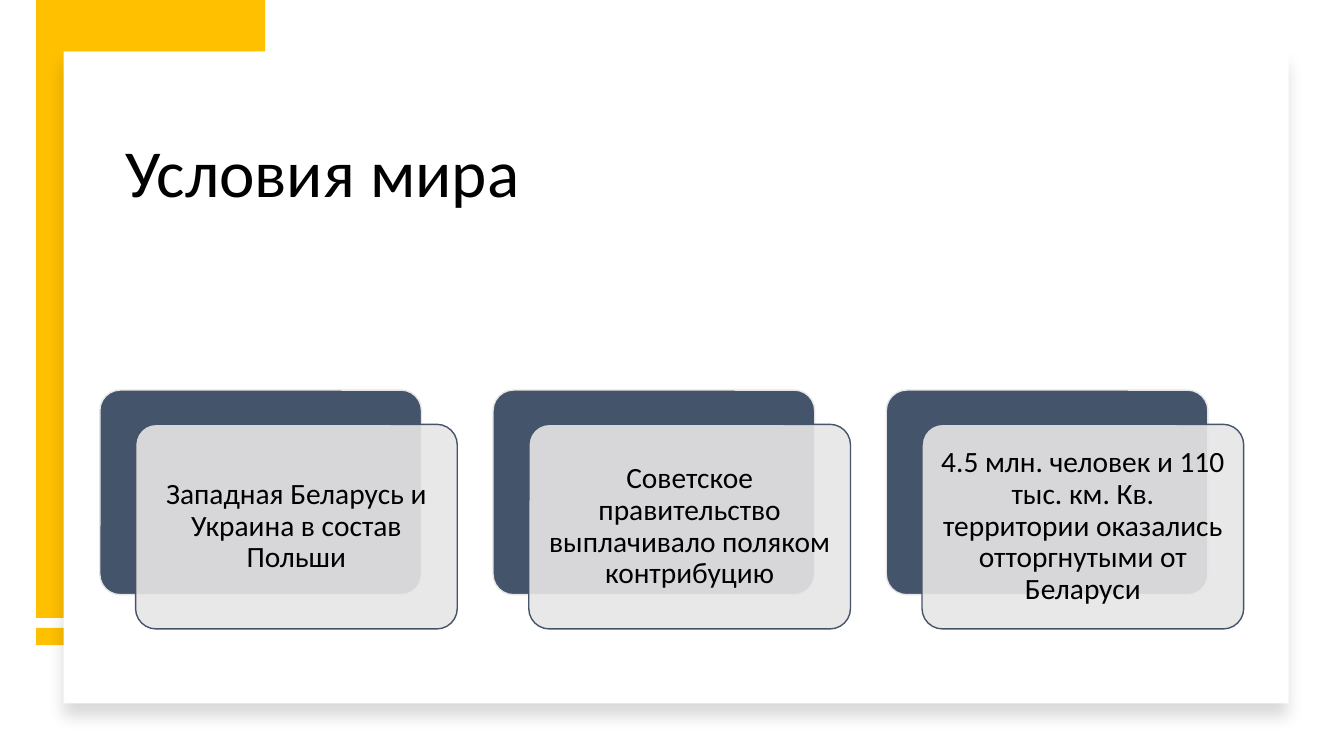
from lxml.etree import SubElement
from pptx import Presentation
from pptx.dml.color import RGBColor
from pptx.enum.shapes import MSO_SHAPE
from pptx.enum.text import MSO_ANCHOR, MSO_AUTO_SIZE, PP_ALIGN
from pptx.oxml.ns import qn
from pptx.util import Inches, Pt

GOLD = RGBColor(0xFF, 0xC0, 0x00)
WHITE = RGBColor(0xFF, 0xFF, 0xFF)
BLACK = RGBColor(0x00, 0x00, 0x00)
SLATE = RGBColor(0x44, 0x54, 0x6A)
PALE = RGBColor(0xE7, 0xE6, 0xE6)

FONT = "Calibri"
CARD_LEFT, CARD_TOP, CARD_PITCH = 0.99, 3.87, 3.9
CARD_WIDTH, CARD_HEIGHT = 3.19, 2.03
CARD_SHIFT_X, CARD_SHIFT_Y = 0.355, 0.34

CONDITIONS = (
    "Западная Беларусь и Украина в состав Польши",
    "Советское правительство выплачивало поляком контрибуцию",
    "4.5 млн. человек и 110 тыс. км. Кв. территории оказались отторгнутыми от Беларуси",
)


def add_box(page, kind, left, top, width, height, fill, line=None):
    """Add a filled preset shape, outlined only when a line colour is given."""
    box = page.shapes.add_shape(
        kind, Inches(left), Inches(top), Inches(width), Inches(height))
    box.shadow.inherit = False
    box.fill.solid()
    box.fill.fore_color.rgb = fill
    if line is None:
        box.line.fill.background()
    else:
        box.line.color.rgb = line
        box.line.width = Pt(1)
    return box


def add_alpha(color, percent):
    """Give a colour element an opacity in percent."""
    SubElement(color, qn("a:alpha"), val=str(percent * 1000))


def add_soft_shadow(box):
    """Cast a faint shadow straight down from a shape."""
    effects = box.element.spPr.find(qn("a:effectLst"))
    shadow = SubElement(
        effects, qn("a:outerShdw"), blurRad=str(Pt(11)), dist=str(Pt(10)),
        dir="5400000", algn="t", rotWithShape="0")
    add_alpha(SubElement(shadow, qn("a:srgbClr"), val=str(BLACK)), 15)


def write_text(frame, text, size, align):
    """Write one vertically centred paragraph into a text frame."""
    frame.word_wrap = True
    frame.auto_size = MSO_AUTO_SIZE.NONE
    frame.vertical_anchor = MSO_ANCHOR.MIDDLE
    para = frame.paragraphs[0]
    para.text = text
    para.alignment = align
    para.line_spacing = 0.9
    para.font.name = FONT
    para.font.size = Pt(size)
    para.font.color.rgb = BLACK


def add_panel(page):
    """Add the gold corner and the white panel that lies over it."""
    add_box(page, MSO_SHAPE.RECTANGLE, 0.36, 6.23, 2.27, 0.17, GOLD)
    add_box(page, MSO_SHAPE.RECTANGLE, 0.36, 0, 2.27, 6.13, GOLD)
    panel = add_box(page, MSO_SHAPE.RECTANGLE, 0.63, 0.51, 12.15, 6.47, WHITE)
    add_soft_shadow(panel)


def add_title(page, text):
    """Place and format the title, in front of the panel."""
    title = page.shapes.title
    title.left, title.top = Inches(1.14), Inches(0.89)
    title.width, title.height = Inches(11.13), Inches(1.7)
    write_text(title.text_frame, text, 48, PP_ALIGN.LEFT)
    page.shapes._spTree.append(title.element)


def add_card(page, column, text):
    """Add a dark card with a translucent text card shifted over it."""
    left = CARD_LEFT + column * CARD_PITCH
    back = add_box(page, MSO_SHAPE.ROUNDED_RECTANGLE, left, CARD_TOP,
                   CARD_WIDTH, CARD_HEIGHT, SLATE, PALE)
    front = add_box(page, MSO_SHAPE.ROUNDED_RECTANGLE, left + CARD_SHIFT_X,
                    CARD_TOP + CARD_SHIFT_Y, CARD_WIDTH, CARD_HEIGHT, PALE, SLATE)
    for box in (back, front):
        box.adjustments[0] = 0.1
    add_alpha(front.element.spPr.find(qn("a:solidFill"))[0], 90)
    frame = front.text_frame
    frame.margin_left = frame.margin_right = Inches(0.09)
    frame.margin_top = frame.margin_bottom = Inches(0.09)
    write_text(frame, text, 21, PP_ALIGN.CENTER)


def main():
    """Build the slide and save the deck."""
    deck = Presentation()
    deck.slide_width, deck.slide_height = Inches(13.33), Inches(7.5)
    page = deck.slides.add_slide(deck.slide_layouts[5])
    add_panel(page)
    add_title(page, "Условия мира")
    for column, text in enumerate(CONDITIONS):
        add_card(page, column, text)
    deck.save("out.pptx")


if __name__ == "__main__":
    main()
